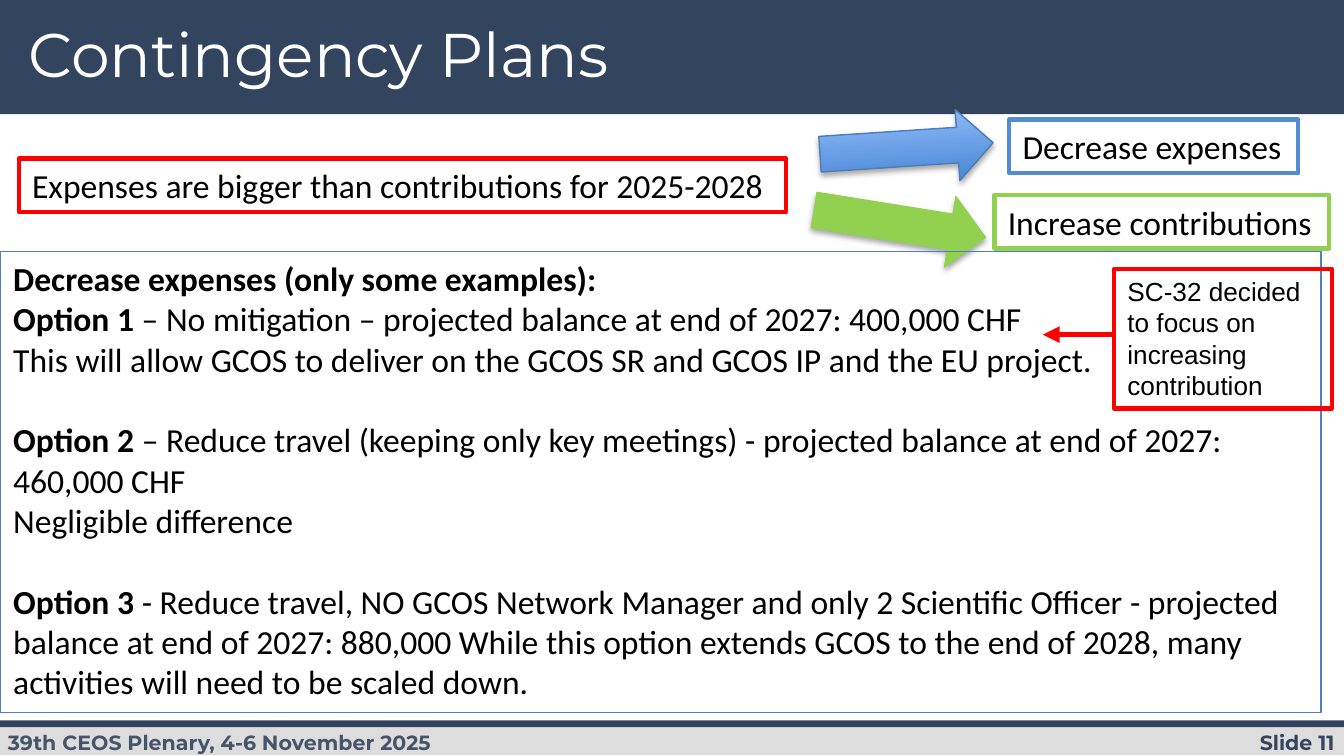
"""Build the contingency plans slide."""
from typing import NamedTuple

from lxml import etree
from pptx import Presentation
from pptx import util as u
from pptx.dml.color import RGBColor
from pptx.enum import shapes, text
from pptx.oxml import ns

NAVY = RGBColor(0x33, 0x44, 0x5F)
SLATE = RGBColor(0x44, 0x54, 0x6A)
GREY = RGBColor(0xDD, 0xDD, 0xDD)
WHITE = RGBColor(0xFF, 0xFF, 0xFF)
BLACK = RGBColor(0, 0, 0)
RED = RGBColor(0xFF, 0, 0)
GREEN = RGBColor(0x92, 0xD0, 0x50)
BLUE = RGBColor(0x53, 0x8C, 0xD5)
FRAME_BLUE = RGBColor(0x4F, 0x81, 0xBD)
ARROW_EDGE = RGBColor(0x4A, 0x7D, 0xBA)
ARROW_DARK = RGBColor(0x3E, 0x7F, 0xCD)
ARROW_LIGHT = RGBColor(0x96, 0xC0, 0xFF)


class Area(NamedTuple):
    left: float
    top: float
    width: float
    height: float

    def lengths(self) -> list:
        return [u.Inches(value) for value in self]


class Bar(NamedTuple):
    area: Area
    color: RGBColor


class Frame(NamedTuple):
    area: Area
    color: RGBColor
    words: str
    font: str = "Calibri"
    size: int = 18


class BlockArrow(NamedTuple):
    area: Area
    rotation: float
    edge: RGBColor
    colors: tuple


class Line(NamedTuple):
    lead: str
    rest: str = ""
    gap: float = 0


BARS = [
    Bar(Area(0, 0, 10, 0.85), NAVY),
    Bar(Area(0, 5.39, 10, 0.23), GREY),
    Bar(Area(0, 5.36, 10, 0.05), NAVY),
]
FRAMES = [
    Frame(Area(0.14, 1.18, 5.71, 0.4), RED, "Expenses are bigger than contributions for 2025-2028"),
    Frame(Area(7.51, 0.89, 2.15, 0.4), BLUE, "Decrease expenses"),
    Frame(Area(7.4, 1.45, 2.49, 0.4), GREEN, "Increase contributions"),
]
DECISION = Frame(Area(8.29, 2, 1.62, 1.04), RED,
                 "SC-32 decided to focus on increasing contribution", "Arial", 14)
ARROWS = [
    BlockArrow(Area(6.1, 0.84, 1.29, 0.53), 356.2, ARROW_EDGE, (ARROW_DARK, ARROW_LIGHT)),
    BlockArrow(Area(6.05, 1.4, 1.29, 0.53), 9.1, GREEN, (GREEN,)),
]
OPTIONS = [
    Line("Decrease expenses (only some examples):"),
    Line("Option 1", " – No mitigation – projected balance at end of 2027: 400,000 CHF"),
    Line("", "This will allow GCOS to deliver on the GCOS SR and GCOS IP and the EU project."),
    Line("Option 2 ", "– Reduce travel (keeping only key meetings) - projected balance "
         "at end of 2027: 460,000 CHF", 21.6),
    Line("", "Negligible difference"),
    Line("Option 3 ", "- Reduce travel, NO GCOS Network Manager and only 2 Scientific Officer "
         "- projected balance at end of 2027: 880,000 While this option extends GCOS to the end "
         "of 2028, many activities will need to be scaled down.", 21.6),
]


def add_span(para, words: str, *, font: str = "Calibri", size: float = 18,
             color: RGBColor = BLACK, bold: bool = False) -> None:
    """Append formatted text to a paragraph."""
    span = para.add_run()
    span.text = words
    span.font.name, span.font.size = font, u.Pt(size)
    span.font.color.rgb, span.font.bold = color, bold


def set_frame(box, side: float, edge: float) -> None:
    """Make a text frame wrap, start at the top and use the given insets."""
    frame = box.text_frame
    frame.word_wrap = True
    frame.auto_size = text.MSO_AUTO_SIZE.NONE
    frame.vertical_anchor = text.MSO_ANCHOR.TOP
    frame.margin_left = frame.margin_right = u.Inches(side)
    frame.margin_top = frame.margin_bottom = u.Inches(edge)


def add_bar(page, bar: Bar):
    """Draw a plain filled band."""
    box = page.shapes.add_shape(shapes.MSO_SHAPE.RECTANGLE, *bar.area.lengths())
    box.shadow.inherit = False
    box.fill.solid()
    box.fill.fore_color.rgb = bar.color
    box.line.fill.background()
    return box


def add_outline(page, area: Area, color: RGBColor, weight: float):
    """Draw an unfilled rectangle ready for left-aligned text."""
    box = page.shapes.add_shape(shapes.MSO_SHAPE.RECTANGLE, *area.lengths())
    box.shadow.inherit = False
    box.fill.background()
    box.line.color.rgb, box.line.width = color, u.Pt(weight)
    set_frame(box, 0.1, 0.05)
    box.text_frame.paragraphs[0].alignment = text.PP_ALIGN.LEFT
    return box


def add_frame(page, frame: Frame) -> None:
    """Draw an outlined label."""
    box = add_outline(page, frame.area, frame.color, 2.25)
    add_span(box.text_frame.paragraphs[0], frame.words, font=frame.font, size=frame.size)


def add_block_arrow(page, arrow: BlockArrow) -> None:
    """Draw a rotated block arrow with a soft shadow."""
    box = page.shapes.add_shape(shapes.MSO_SHAPE.RIGHT_ARROW, *arrow.area.lengths())
    box.rotation = arrow.rotation
    if len(arrow.colors) > 1:
        box.fill.gradient()
        box.fill.gradient_angle = 90
        for stop, color in zip(box.fill.gradient_stops, arrow.colors):
            stop.color.rgb = color
    else:
        box.fill.solid()
        box.fill.fore_color.rgb = arrow.colors[0]
    box.line.color.rgb, box.line.width = arrow.edge, u.Pt(0.75)
    box.shadow.inherit = False
    effects = box._element.spPr.find(ns.qn("a:effectLst"))
    shadow = etree.SubElement(effects, ns.qn("a:outerShdw"), blurRad=str(u.Pt(3.1)),
                              dist=str(u.Pt(1.8)), dir="5400000", rotWithShape="0")
    tint = etree.SubElement(shadow, ns.qn("a:srgbClr"), val=str(BLACK))
    etree.SubElement(tint, ns.qn("a:alpha"), val="35000")


def add_options(page) -> None:
    """Write the framed list of options."""
    box = add_outline(page, Area(0, 1.87, 9.83, 3.43), FRAME_BLUE, 0.75)
    for index, line in enumerate(OPTIONS):
        para = box.text_frame.add_paragraph() if index else box.text_frame.paragraphs[0]
        para.alignment = text.PP_ALIGN.LEFT
        para.space_before = u.Pt(line.gap)
        if line.lead:
            add_span(para, line.lead, bold=True)
        if line.rest:
            add_span(para, line.rest)


def add_pointer(page, start: float, end: float, height: float) -> None:
    """Draw the level red arrow from the decision to the first option."""
    pointer = page.shapes.add_connector(shapes.MSO_CONNECTOR.STRAIGHT, u.Inches(start),
                                        u.Inches(height), u.Inches(end), u.Inches(height))
    pointer.line.color.rgb, pointer.line.width = RED, u.Pt(3)
    etree.SubElement(pointer.line._get_or_add_ln(), ns.qn("a:tailEnd"), type="triangle")
    etree.SubElement(pointer._element.spPr, ns.qn("a:effectLst"))


def add_footer(page, area: Area, words: str, *, color: RGBColor, side: float, edge: float,
               align=text.PP_ALIGN.LEFT) -> None:
    """Write one bold footer text."""
    box = page.shapes.add_textbox(*area.lengths())
    set_frame(box, side, edge)
    para = box.text_frame.paragraphs[0]
    para.alignment = align
    add_span(para, words, font="Montserrat", size=11, color=color, bold=True)


def add_title(page, below) -> None:
    """Place the title just above the last band."""
    title = page.shapes.title
    title.left, title.top, title.width, title.height = Area(0.14, 0.14, 7.7, 0.64).lengths()
    set_frame(title, 0.07, 0.04)
    para = title.text_frame.paragraphs[0]
    para.alignment, para.line_spacing = text.PP_ALIGN.LEFT, 0.9
    add_span(para, "Contingency Plans", font="Montserrat", size=33, color=WHITE)
    below._element.addnext(title._element)


def main() -> None:
    """Build and save the deck."""
    deck = Presentation()
    deck.slide_width = u.Inches(10)
    deck.slide_height = deck.slide_width * 9 // 16
    page = deck.slides.add_slide(deck.slide_layouts[5])
    bands = [add_bar(page, bar) for bar in BARS]
    add_title(page, bands[-1])
    add_footer(page, Area(8.42, 5.39, 1.58, 0.26), "Slide 11", color=NAVY, side=0.07, edge=0.04,
               align=text.PP_ALIGN.RIGHT)
    add_footer(page, Area(-0.04, 5.33, 3.82, 0.39), "39th CEOS Plenary, 4-6 November 2025",
               color=SLATE, side=0.1, edge=0.1)
    for frame in FRAMES:
        add_frame(page, frame)
    for arrow in ARROWS:
        add_block_arrow(page, arrow)
    add_options(page)
    add_frame(page, DECISION)
    add_pointer(page, DECISION.area.left, 7.76, 2.49)
    deck.save("out.pptx")


if __name__ == "__main__":
    main()
